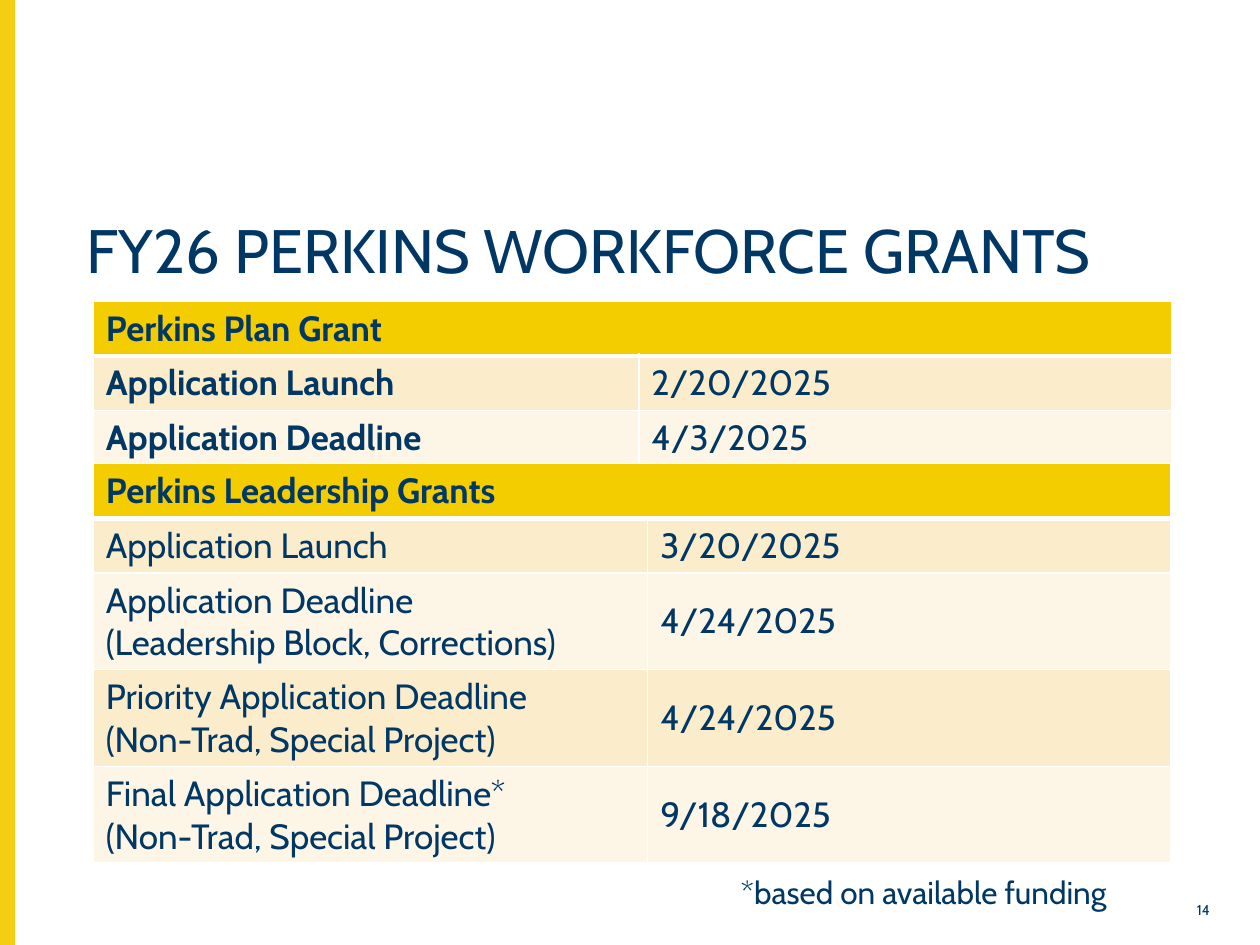
from lxml import etree
from pptx import Presentation
from pptx.dml.color import RGBColor
from pptx.enum.shapes import MSO_SHAPE
from pptx.enum.text import MSO_ANCHOR, PP_ALIGN
from pptx.oxml.ns import qn
from pptx.util import Inches, Pt

FONT = "Cabin"
COLORS = {
    "navy": "003764",
    "stripe": "F4CE12",
    "header": "F4CD00",
    "odd": "FBEDCC",
    "even": "FDF6E7",
    "border": "FFFFFF",
}
PLAN_ROWS = [
    ("Application Launch", "2/20/2025"),
    ("Application Deadline", "4/3/2025"),
]
LEADERSHIP_ROWS = [
    ("Application Launch", "3/20/2025"),
    ("Application Deadline\n(Leadership Block, Corrections)", "4/24/2025"),
    ("Priority Application Deadline\n(Non-Trad, Special Project)", "4/24/2025"),
    ("Final Application Deadline*\n(Non-Trad, Special Project)", "9/18/2025"),
]


def color(name):
    return RGBColor.from_string(COLORS[name])


def write(frame, text, size, bold=False):
    frame.text = text
    for para in frame.paragraphs:
        para.font.name = FONT
        para.font.size = Pt(size)
        para.font.bold = bold
        para.font.color.rgb = color("navy")


def add_stripe(page):
    stripe = page.shapes.add_shape(
        MSO_SHAPE.RECTANGLE, 0, 0, Inches(0.11), Inches(7.5))
    stripe.shadow.inherit = False
    stripe.fill.solid()
    stripe.fill.fore_color.rgb = color("stripe")
    stripe.line.color.rgb = color("stripe")
    stripe.line.width = Pt(1)


def add_text(page, place, text, size):
    box = page.shapes.add_textbox(*[Inches(length) for length in place])
    box.text_frame.word_wrap = True
    write(box.text_frame, text, size)
    return box.text_frame


def set_border(cell, side, points):
    properties = cell._tc.get_or_add_tcPr()
    line = etree.SubElement(properties, qn(f"a:ln{side}"), w=str(Pt(points)))
    fill = etree.SubElement(line, qn("a:solidFill"))
    etree.SubElement(fill, qn("a:srgbClr"), val=COLORS["border"])


def style_cell(cell, row, fill):
    """Draw borders, thicker under the header row, and then the fill."""
    widths = {"L": 1, "R": 1, "T": 3 if row == 1 else 1, "B": 3 if row == 0 else 1}
    for side, points in widths.items():
        set_border(cell, side, points)
    cell.fill.solid()
    cell.fill.fore_color.rgb = color(fill)


def add_grant_table(page, top, title, rows, widths, heights,
                    bold_labels=False, date_anchor=MSO_ANCHOR.TOP):
    table = page.shapes.add_table(
        len(rows) + 1, 2, Inches(0.74), Inches(top),
        Inches(sum(widths)), Inches(sum(heights))).table
    for column, width in zip(table.columns, widths):
        column.width = Inches(width)
    for table_row, height in zip(table.rows, heights):
        table_row.height = Inches(height)

    header = table.cell(0, 0)
    header.merge(table.cell(0, 1))
    write(header.text_frame, title, 20, bold=True)
    for column in range(2):
        style_cell(table.cell(0, column), 0, "header")

    for row, (label, date) in enumerate(rows, start=1):
        label_cell, date_cell = table.cell(row, 0), table.cell(row, 1)
        write(label_cell.text_frame, label, 20, bold_labels)
        write(date_cell.text_frame, date, 20)
        date_cell.vertical_anchor = date_anchor
        for cell in (label_cell, date_cell):
            style_cell(cell, row, "odd" if row % 2 else "even")


def main():
    deck = Presentation()
    deck.slide_width, deck.slide_height = Inches(10), Inches(7.5)
    page = deck.slides.add_slide(deck.slide_layouts[6])

    add_stripe(page)
    title = add_text(page, (0.59, 1.7, 9.12, 0.87),
                     "FY26 PERKINS WORKFORCE GRANTS", 35)
    title.paragraphs[0].line_spacing = 0.9
    number = add_text(page, (9.19, 7.09, 0.51, 0.26), "14", 8.2)
    number.vertical_anchor = MSO_ANCHOR.MIDDLE
    number.paragraphs[0].alignment = PP_ALIGN.RIGHT

    add_grant_table(page, 2.39, "Perkins Plan Grant", PLAN_ROWS,
                    (4.33, 4.23), [0.43] * 3, bold_labels=True)
    add_grant_table(page, 3.68, "Perkins Leadership Grants", LEADERSHIP_ROWS,
                    (4.4, 4.15), [0.41] * 2 + [0.73] * 3,
                    date_anchor=MSO_ANCHOR.MIDDLE)
    add_text(page, (5.78, 6.88, 3.52, 0.4), "*based on available funding", 18)

    deck.save("out.pptx")


if __name__ == "__main__":
    main()
